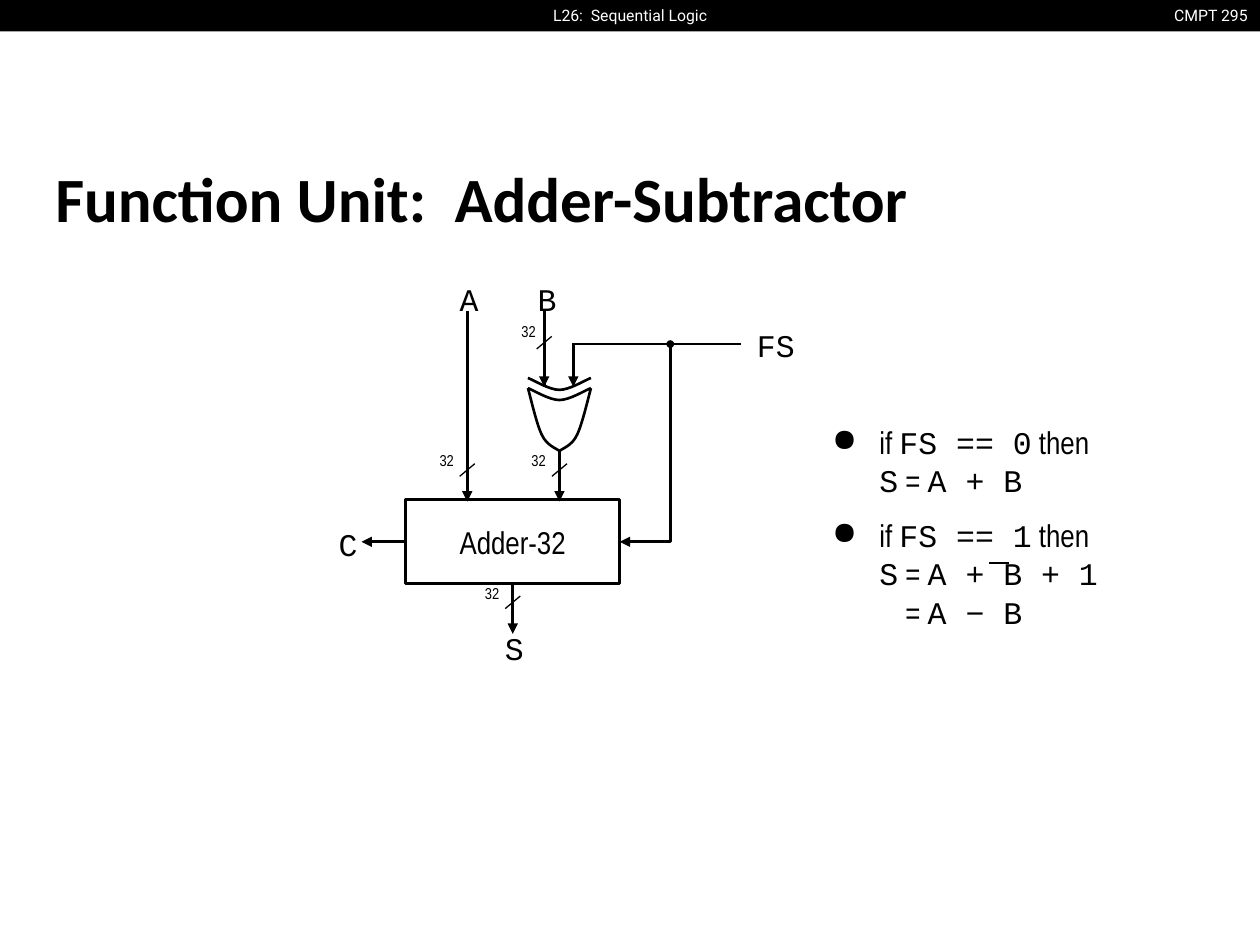
from typing import NamedTuple

import pptx
import pptx.dml.color
import pptx.enum.shapes
import pptx.enum.text
import pptx.oxml.ns
import pptx.util
from lxml import etree

Pt = pptx.util.Pt
Align = pptx.enum.text.PP_ALIGN
Shape = pptx.enum.shapes.MSO_SHAPE
BLACK, WHITE = "000000", "FFFFFF"
SANS, MONO = "Arial Narrow", "Courier New"
TOP, LEFT, BOTTOM, RIGHT = range(4)


class Label(NamedTuple):
    text: str
    x: float
    y: float
    w: float
    h: float
    size: float = 18
    font: str = MONO
    color: str = BLACK
    bold: bool = False
    align: Align = Align.LEFT
    inset: tuple = (7.2, 7.2)
    wrap: bool = True


class Wire(NamedTuple):
    x1: float
    y1: float
    x2: float
    y2: float
    arrow: bool = False
    begin: int | None = None  # side of the adder joined at the start
    end: int | None = None  # side of the adder joined at the end
    width: float = 1.5


class Line(NamedTuple):
    runs: list  # (text, font) pairs
    indent: float = 36
    bullet: bool = False
    before: float = 0


def rgb(color: str):
    return pptx.dml.color.RGBColor.from_string(color)


def sub(parent, tag: str, **attrs):
    return etree.SubElement(parent, pptx.oxml.ns.qn(tag), **attrs)


def style_run(r, size: float, font: str, color: str = BLACK, bold: bool = False) -> None:
    r.font.size, r.font.name, r.font.bold = Pt(size), font, bold
    r.font.color.rgb = rgb(color)


def text_box(s, x: float, y: float, w: float, h: float, inset=(7.2, 7.2), wrap=True):
    tf = s.shapes.add_textbox(Pt(x), Pt(y), Pt(w), Pt(h)).text_frame
    tf.word_wrap = wrap
    tf.margin_left = tf.margin_right = Pt(inset[0])
    tf.margin_top = tf.margin_bottom = Pt(inset[1])
    return tf


def add_label(s, lb: Label) -> None:
    tf = text_box(s, lb.x, lb.y, lb.w, lb.h, lb.inset, lb.wrap)
    tf.text = lb.text
    p = tf.paragraphs[0]
    p.alignment = lb.align
    style_run(p.runs[0], lb.size, lb.font, lb.color, lb.bold)


def add_wire(s, wire: Wire, adder) -> None:
    c = s.shapes.add_connector(pptx.enum.shapes.MSO_CONNECTOR.STRAIGHT,
                               Pt(wire.x1), Pt(wire.y1), Pt(wire.x2), Pt(wire.y2))
    if wire.begin is not None:
        c.begin_connect(adder, wire.begin)
    if wire.end is not None:
        c.end_connect(adder, wire.end)
    c.line.width = Pt(wire.width)
    c.line.color.rgb = rgb(BLACK)
    if wire.arrow:
        sub(c.line._get_or_add_ln(), "a:tailEnd", type="triangle")
    sub(c._element.spPr, "a:effectLst")


def add_outline(s, points: list, curved: bool = False) -> None:
    """Open outline; when curved, each three points after the first form a Bezier."""
    (x, y), *rest = [(Pt(px), Pt(py)) for px, py in points]
    builder = s.shapes.build_freeform(x, y)
    builder.add_line_segments(rest, close=False)
    sp = builder.convert_to_shape()
    sp.shadow.inherit = False
    sp.fill.background()
    sp.line.color.rgb = rgb(BLACK)
    sp.line.width = Pt(1.5)
    if curved:
        segments = list(sp._element.iter(pptx.oxml.ns.qn("a:lnTo")))
        outline = segments[0].getparent()
        for i in range(0, len(segments), 3):
            curve = sub(outline, "a:cubicBezTo")
            for segment in segments[i:i + 3]:
                curve.append(segment[0])
                outline.remove(segment)


def add_shape(s, kind, x: float, y: float, w: float, h: float):
    sp = s.shapes.add_shape(kind, Pt(x), Pt(y), Pt(w), Pt(h))
    sp.shadow.inherit = False
    return sp


def add_filled(s, kind, x: float, y: float, w: float, h: float) -> None:
    sp = add_shape(s, kind, x, y, w, h)
    sp.fill.solid()
    sp.fill.fore_color.rgb = rgb(BLACK)
    sp.line.fill.background()


def add_lines(s, y: float, lines: list) -> None:
    tf = text_box(s, 459.4, y, 205.2, 207.4)
    for i, line in enumerate(lines):
        p = tf.paragraphs[0] if i == 0 else tf.add_paragraph()
        if line.before:
            p.space_before = Pt(line.before)
        pPr = p._p.get_or_add_pPr()
        pPr.set("marL", str(Pt(line.indent)))
        pPr.set("indent", str(Pt(-27 if line.bullet else 0)))
        if line.bullet:
            sub(sub(pPr, "a:buClr"), "a:srgbClr", val=BLACK)
            sub(pPr, "a:buChar", char="●")
        for text, font in line.runs:
            r = p.add_run()
            r.text = text
            style_run(r, 18, font)


def condition(value: int, before: float = 0) -> Line:
    return Line([("if ", SANS), (f"FS == {value}", MONO), (" then", SANS)],
                bullet=True, before=before)


def result(expression: str) -> Line:
    return Line([("S", MONO), (" = ", SANS), (expression, MONO)])


# Column positions of the diagram
A_X, B_X, FS_X, GATE_X, OUT_X, CARRY_X = 267, 311, 327.6, 319.7, 293, 383
FS_Y, ADDER_Y = 196.6, 309.6

HEADER = dict(size=9, font="Roboto", color=WHITE, inset=(7.2, 3.6), wrap=False)
BUS = dict(text="32", size=9, font=SANS)
SIGNAL = dict(w=40.3, h=23.8)
LABELS = [
    Label("CMPT 295", 661.7, 0, 58.3, 18, align=Align.RIGHT, **HEADER),
    Label("L26:  Sequential Logic", 293, 0, 134, 18, align=Align.CENTER, **HEADER),
    Label("Function Unit:  Adder-Subtractor", 24.5, 84.2, 671, 50.4, 36, "Calibri", bold=True),
    Label(x=296.6, y=252, w=29.5, h=20.2, **BUS),
    Label(x=244.1, y=252, w=36.7, h=20.2, **BUS),
    Label(x=270, y=328.3, w=36.7, h=28, **BUS),
    Label(x=290.9, y=178.6, w=29.5, h=20.2, **BUS),
    Label("A", 255.6, 152.6, **SIGNAL),
    Label("B", 300.2, 152.6, **SIGNAL),
    Label("S", 281.5, 352.1, **SIGNAL),
    Label("C", 186.5, 293, **SIGNAL),
    Label("FS", 425.5, 179.3, **SIGNAL),
]
WIRES = [
    Wire(A_X, 177.8, A_X, 262),
    Wire(A_X, 257.8, A_X, 286.6, arrow=True),
    Wire(B_X, 177.8, B_X, 221),
    Wire(B_X, 195.8, B_X, 221, arrow=True),
    Wire(FS_X, 195.8, FS_X, 221, arrow=True),
    Wire(GATE_X, 257.8, GATE_X, 286.6, arrow=True),
    Wire(379.4, ADDER_Y, 354.2, ADDER_Y, arrow=True, end=RIGHT),
    Wire(231.8, ADDER_Y, 206.6, ADDER_Y, arrow=True, begin=LEFT),
    Wire(OUT_X, 333.6, OUT_X, 362.2, arrow=True, begin=BOTTOM),
    Wire(565.2, 321.8, 576.7, 321.8, width=0.75),  # bar over B
]
SLASHES = [(A_X, 268.6), (GATE_X, 268.6), (OUT_X, 344.2), (B_X, 195.8)]

# XOR gate, as offsets from its axis
GATE_SIDE = [(18, 221.8), (16.6, 226.8), (13, 242.6), (10.1, 248.4),
             (7.2, 254.9), (1.4, 256.3), (0, 257.8)]
GATE_ARC = [(18, 0), (14.4, 1.4), (5.8, 6.8), (0, 6.8), (-5.8, 6.8), (-14.4, 1.4), (-18, 0)]


def main() -> None:
    prs = pptx.Presentation()
    prs.slide_width, prs.slide_height = Pt(720), Pt(540)
    s = prs.slides.add_slide(prs.slide_layouts[6])

    # Header bar, title and diagram labels
    add_filled(s, Shape.RECTANGLE, 0, 0, 720, 18)
    for label in LABELS:
        add_label(s, label)

    # Adder block
    adder = add_shape(s, Shape.RECTANGLE, 231.8, 285.6, 122.4, 48)
    adder.fill.background()
    adder.line.color.rgb = rgb(BLACK)
    adder.line.width = Pt(1.5)
    adder.text_frame.text = "Adder-32"
    p = adder.text_frame.paragraphs[0]
    p.alignment = Align.CENTER
    style_run(p.runs[0], 18, SANS)

    # XOR gate
    for side in (1, -1):
        add_outline(s, [(GATE_X + side * dx, y) for dx, y in GATE_SIDE], curved=True)
    for top in (216, 221.8):
        add_outline(s, [(GATE_X + dx, top + dy) for dx, dy in GATE_ARC], curved=True)

    # Wires, bus slashes and the FS branch
    slashes = [Wire(x + 4.3, y - 3.6, x - 4.3, y + 3.6, width=0.75) for x, y in SLASHES]
    for wire in WIRES + slashes:
        add_wire(s, wire, adder)
    add_outline(s, [(FS_X, 211.7), (FS_X, FS_Y), (423.4, FS_Y)])
    add_outline(s, [(367.9, ADDER_Y), (CARRY_X, ADDER_Y), (CARRY_X, FS_Y)])
    add_filled(s, Shape.OVAL, CARRY_X - 2.2, FS_Y - 2.2, 4.4, 4.4)

    # Explanation
    add_lines(s, 234.7, [condition(0), result("A + B"), condition(1, before=10)])
    add_lines(s, 309.6, [result("A + B + 1")])
    add_lines(s, 331.9, [Line([("= ", SANS), ("A − B", MONO)], indent=50.9)])

    prs.save("out.pptx")


if __name__ == "__main__":
    main()
